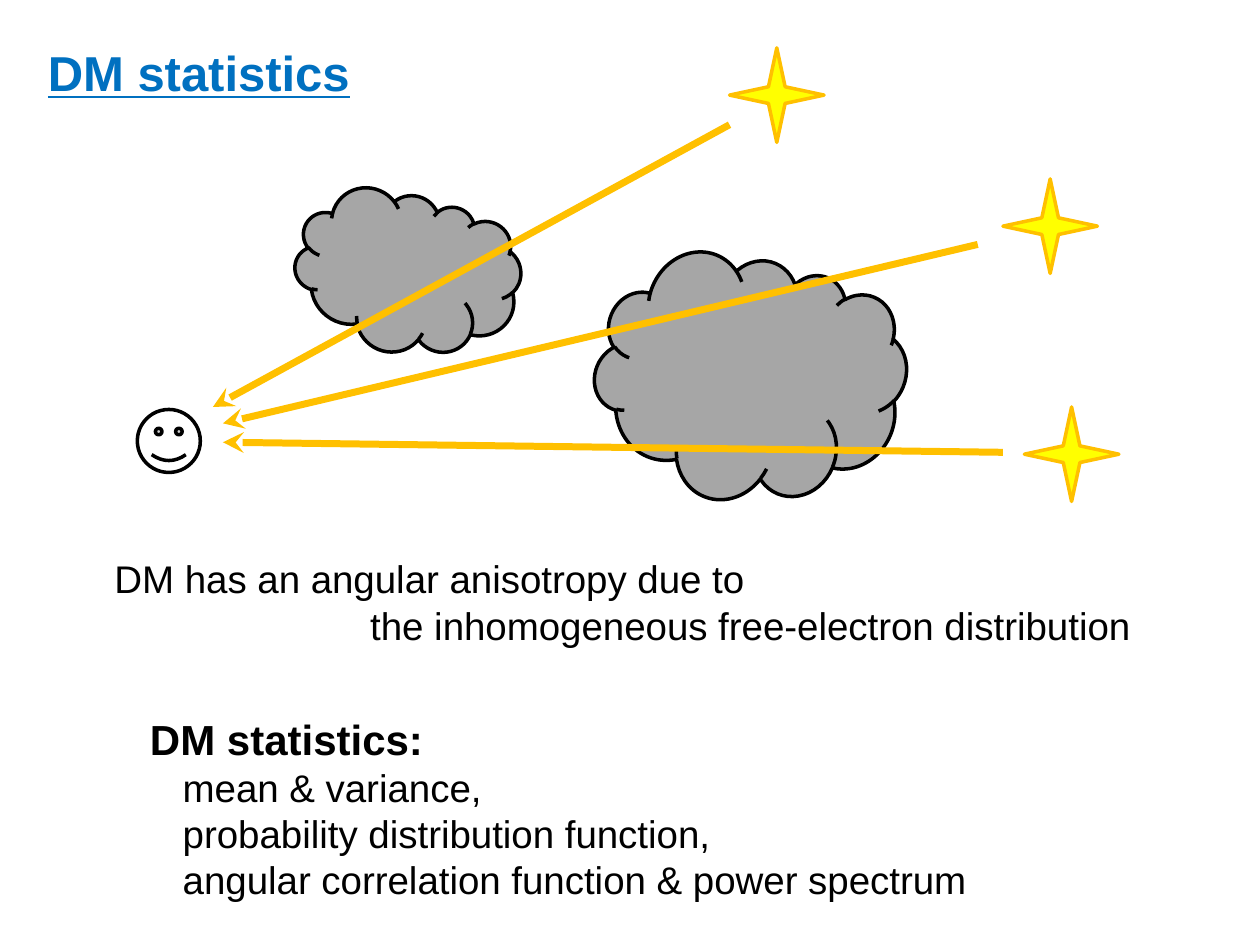
from dataclasses import dataclass

from lxml import etree
from pptx import Presentation, util as u
from pptx.dml.color import RGBColor
from pptx.enum import shapes, text
from pptx.oxml.ns import qn


@dataclass(frozen=True)
class Theme:
    font: str = "Arial"
    heading: str = "0070C0"
    ink: str = "000000"
    face: str = "FFFFFF"
    gas: str = "A6A6A6"
    star: str = "FFFF00"
    light: str = "FFC000"
    title_size: int = 28
    lead_size: int = 24
    text_size: int = 22
    outline: int = 2
    ray: int = 4


THEME = Theme()
COLUMNS, ROWS = 100, 75
CELL = u.Inches(10) // COLUMNS


@dataclass(frozen=True)
class Box:
    left: float
    top: float
    width: float
    height: float

    def inner(self, left, top, width, height):
        return Box(self.left + left, self.top + top, width, height)

    def point(self, column, row):
        return round((self.left + column) * CELL), round((self.top + row) * CELL)

    def frame(self):
        return *self.point(0, 0), round(self.width * CELL), round(self.height * CELL)


def rgb(color):
    return RGBColor.from_string(color)


def place(holder, box):
    holder.left, holder.top, holder.width, holder.height = box.frame()
    frame = holder.text_frame
    frame.word_wrap = True
    frame.auto_size = text.MSO_AUTO_SIZE.NONE
    frame.vertical_anchor = text.MSO_ANCHOR.TOP
    return frame


def write_line(paragraph, words, size, color=THEME.ink, bold=False, underline=False, indent=0):
    paragraph.alignment = text.PP_ALIGN.LEFT
    paragraph.space_before = u.Pt(0)
    properties = paragraph._p.get_or_add_pPr()
    properties.set("marL", str(round(indent * CELL)))
    properties.set("indent", "0")
    etree.SubElement(properties, qn("a:buNone"))
    run = paragraph.add_run()
    run.text = words
    run.font.name = THEME.font
    run.font.size = u.Pt(size)
    run.font.color.rgb = rgb(color)
    run.font.bold = bold
    run.font.underline = underline


def add_title(slide, box):
    frame = place(slide.shapes.title, box)
    write_line(frame.paragraphs[0], "DM statistics", THEME.title_size,
               THEME.heading, bold=True, underline=True)


def add_statistics(slide, box):
    frame = place(slide.placeholders[1], box)
    write_line(frame.paragraphs[0], "DM statistics:", THEME.lead_size, bold=True)
    for statistic in ("mean & variance,", "probability distribution function,",
                      "angular correlation function & power spectrum"):
        write_line(frame.add_paragraph(), statistic, THEME.text_size, indent=2.6)


def add_anisotropy(slide, box):
    frame = place(slide.shapes.add_textbox(*box.frame()), box)
    write_line(frame.paragraphs[0], "DM has an angular anisotropy due to", THEME.text_size)
    write_line(frame.add_paragraph(), "the inhomogeneous free-electron distribution",
               THEME.text_size, indent=20.3)


def add_body(slide, kind, box, fill, edge, tilt=0):
    body = slide.shapes.add_shape(kind, *box.frame())
    body.rotation = tilt
    body.shadow.inherit = False
    body.fill.solid()
    body.fill.fore_color.rgb = rgb(fill)
    body.line.color.rgb = rgb(edge)
    body.line.width = u.Pt(THEME.outline)


def add_ray(slide, start, end):
    ray = slide.shapes.add_connector(shapes.MSO_CONNECTOR.STRAIGHT, *start, *end)
    ray.line.color.rgb = rgb(THEME.light)
    ray.line.width = u.Pt(THEME.ray)
    properties = ray.element.spPr
    etree.SubElement(properties.find(qn("a:ln")), qn("a:tailEnd"), type="stealth")
    etree.SubElement(properties, qn("a:effectLst"))


def add_sightlines(slide, box):
    kinds = shapes.MSO_SHAPE
    add_body(slide, kinds.SMILEY_FACE, box.inner(0.9, 29.5, 5, 5), THEME.face, THEME.ink)
    for cloud in ((13.4, 12.3, 17.8, 12.8), (37.4, 17.2, 24.1, 19.8)):
        add_body(slide, kinds.CLOUD, box.inner(*cloud), THEME.gas, THEME.ink, tilt=22.7)
    for source in ((47.9, 0.8), (69.6, 11.2), (71.3, 29.3)):
        add_body(slide, kinds.STAR_4_POINT, box.inner(*source, 7.5, 7.5),
                 THEME.star, THEME.light)
    for start, end in (((69.6, 32.9), (7.7, 32.1)),
                       ((67.6, 16.4), (7.7, 30.6)),
                       ((47.9, 6.9), (6.9, 29.3))):
        add_ray(slide, box.point(*start), box.point(*end))


def main():
    deck = Presentation()
    deck.slide_width, deck.slide_height = COLUMNS * CELL, ROWS * CELL
    slide = deck.slides.add_slide(deck.slide_layouts[1])
    for holder in list(slide.placeholders)[2:]:
        holder.element.getparent().remove(holder.element)
    add_title(slide, Box(2.8, 2.9, 27, 5.7))
    add_statistics(slide, Box(10.9, 56.1, 70.2, 16.5))
    add_anisotropy(slide, Box(8.1, 43.6, 85.5, 8.4))
    add_sightlines(slide, Box(10, 3, 80, 38))
    deck.save("out.pptx")


if __name__ == "__main__":
    main()
